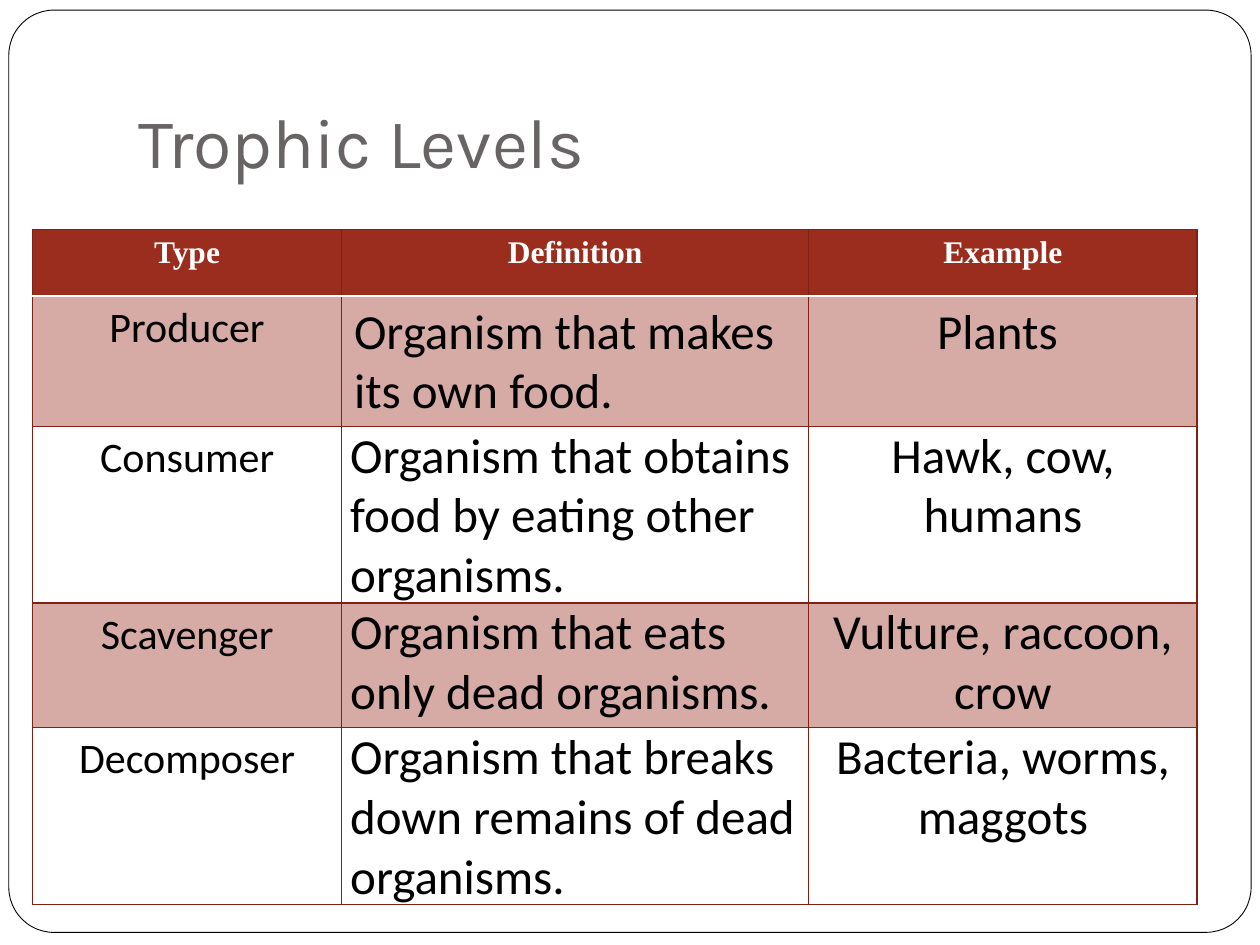
from dataclasses import dataclass

from lxml.etree import SubElement
from pptx import Presentation
from pptx.dml.color import RGBColor
from pptx.enum.shapes import MSO_SHAPE
from pptx.enum.text import MSO_ANCHOR, PP_ALIGN
from pptx.oxml import parse_xml
from pptx.oxml.ns import nsdecls, qn
from pptx.slide import Slide
from pptx.table import Table, _Cell
from pptx.util import Inches, Pt

HUES = {"white": "FFFFFF", "black": "000000", "gray": "696464",
        "rust": "9B2D1F", "edge": "812014"}
COLS = [2.45, 3.71, 3.08]
HEADS = ["Type", "Definition", "Example"]


@dataclass
class Level:
    """One trophic level, as a row of the table."""
    name: str
    meaning: str
    sample: str
    height: float
    tight: bool = True
    tint: bool = False


LEVELS = [
    Level("Producer", "Organism that makes its own food.", "Plants ", 0.96, tight=False, tint=True),
    Level("Consumer", "Organism that obtains food by eating other organisms.",
          "Hawk, cow, humans", 0.93),
    Level("Scavenger", "Organism that eats only dead organisms.",
          "Vulture, raccoon, crow", 0.99, tint=True),
    Level("Decomposer", "Organism that breaks down remains of dead organisms.",
          "Bacteria, worms, maggots", 1.06),
]


def hue(name: str) -> RGBColor:
    """Look up a colour by name."""
    return RGBColor.from_string(HUES[name])


def add_frame(slide: Slide) -> None:
    """Draw the rounded frame around the slide."""
    frame = slide.shapes.add_shape(MSO_SHAPE.ROUNDED_RECTANGLE, Inches(0.07),
                                   Inches(0.08), Inches(9.86), Inches(7.32))
    frame.adjustments[0] = 0.049
    frame.shadow.inherit = False
    frame.fill.solid()
    frame.fill.fore_color.rgb = hue("white")
    frame.line.color.rgb = hue("black")
    frame.line.width = Pt(0.5)


def add_title(slide: Slide, text: str) -> None:
    """Write the slide title."""
    box = slide.shapes.add_textbox(Inches(1), Inches(0.3), Inches(8.5), Inches(1.25))
    body = box.text_frame
    body.word_wrap = True
    body.vertical_anchor = MSO_ANCHOR.BOTTOM
    body.margin_bottom = Inches(0.1)
    line = body.paragraphs[0]
    line.text = text
    line.font.name = "Karla"
    line.font.size = Pt(40)
    line.font.color.rgb = hue("gray")


def set_edges(cell: _Cell, top: str, base: str) -> None:
    """Rule all four sides of a cell; white rules are wider."""
    props = cell._tc.get_or_add_tcPr()
    sides = {"lnL": "edge", "lnR": "edge", "lnT": top, "lnB": base}
    for place, (tag, name) in enumerate(sides.items()):
        width = Pt(1 if name == "white" else 0.75)
        props.insert(place, parse_xml(
            f'<a:{tag} {nsdecls("a")} w="{width}"><a:solidFill>'
            f'<a:srgbClr val="{HUES[name]}"/></a:solidFill></a:{tag}>'))


def set_fill(cell: _Cell, alpha: int) -> None:
    """Fill a cell with rust at a percentage, or clear it at zero."""
    if not alpha:
        cell.fill.background()
        return
    cell.fill.solid()
    cell.fill.fore_color.rgb = hue("rust")
    if alpha < 100:
        tone = cell._tc.tcPr.find(".//" + qn("a:srgbClr"))
        SubElement(tone, qn("a:alpha")).set("val", str(alpha * 1000))


def set_text(cell: _Cell, text: str, face: str, size: int, tone: str,
             bold: bool, align: PP_ALIGN) -> None:
    """Write and style the text of a cell."""
    line = cell.text_frame.paragraphs[0]
    line.text = text
    line.alignment = align
    line.font.name = face
    line.font.size = Pt(size)
    line.font.bold = bold
    line.font.color.rgb = hue(tone)


def fill_head(table: Table) -> None:
    """Fill the header row."""
    for cell, text in zip(table.rows[0].cells, HEADS):
        set_text(cell, text, "Times New Roman", 18, "white", True, PP_ALIGN.CENTER)
        set_fill(cell, 100)
        set_edges(cell, "edge", "white")


def fill_row(table: Table, row: int, level: Level) -> None:
    """Fill one row with a trophic level."""
    table.rows[row].height = Inches(level.height)
    texts = [level.name, level.meaning, level.sample]
    for col, (cell, text) in enumerate(zip(table.rows[row].cells, texts)):
        align = PP_ALIGN.LEFT if col == 1 else PP_ALIGN.CENTER
        set_text(cell, text, "Calibri", 28 if col else 24, "black", False, align)
        if col and level.tight:
            cell.margin_left = cell.margin_right = Inches(0.07)
            cell.margin_top = cell.margin_bottom = Inches(0)
        set_fill(cell, 40 if level.tint else 0)
        set_edges(cell, "white" if row == 1 else "edge", "edge")


def add_levels(slide: Slide) -> None:
    """Add the table of trophic levels."""
    high = 0.53
    total = high + sum(level.height for level in LEVELS)
    table = slide.shapes.add_table(len(LEVELS) + 1, len(COLS), Inches(0.26), Inches(1.82),
                                   Inches(sum(COLS)), Inches(total)).table
    for col, width in zip(table.columns, COLS):
        col.width = Inches(width)
    table.rows[0].height = Inches(high)
    fill_head(table)
    for row, level in enumerate(LEVELS, 1):
        fill_row(table, row, level)


def main() -> None:
    """Build and save the slide."""
    deck = Presentation()
    deck.slide_width, deck.slide_height = Inches(10), Inches(7.5)
    slide = deck.slides.add_slide(deck.slide_layouts[6])
    add_frame(slide)
    add_title(slide, "Trophic Levels")
    add_levels(slide)
    deck.save("out.pptx")


if __name__ == "__main__":
    main()
